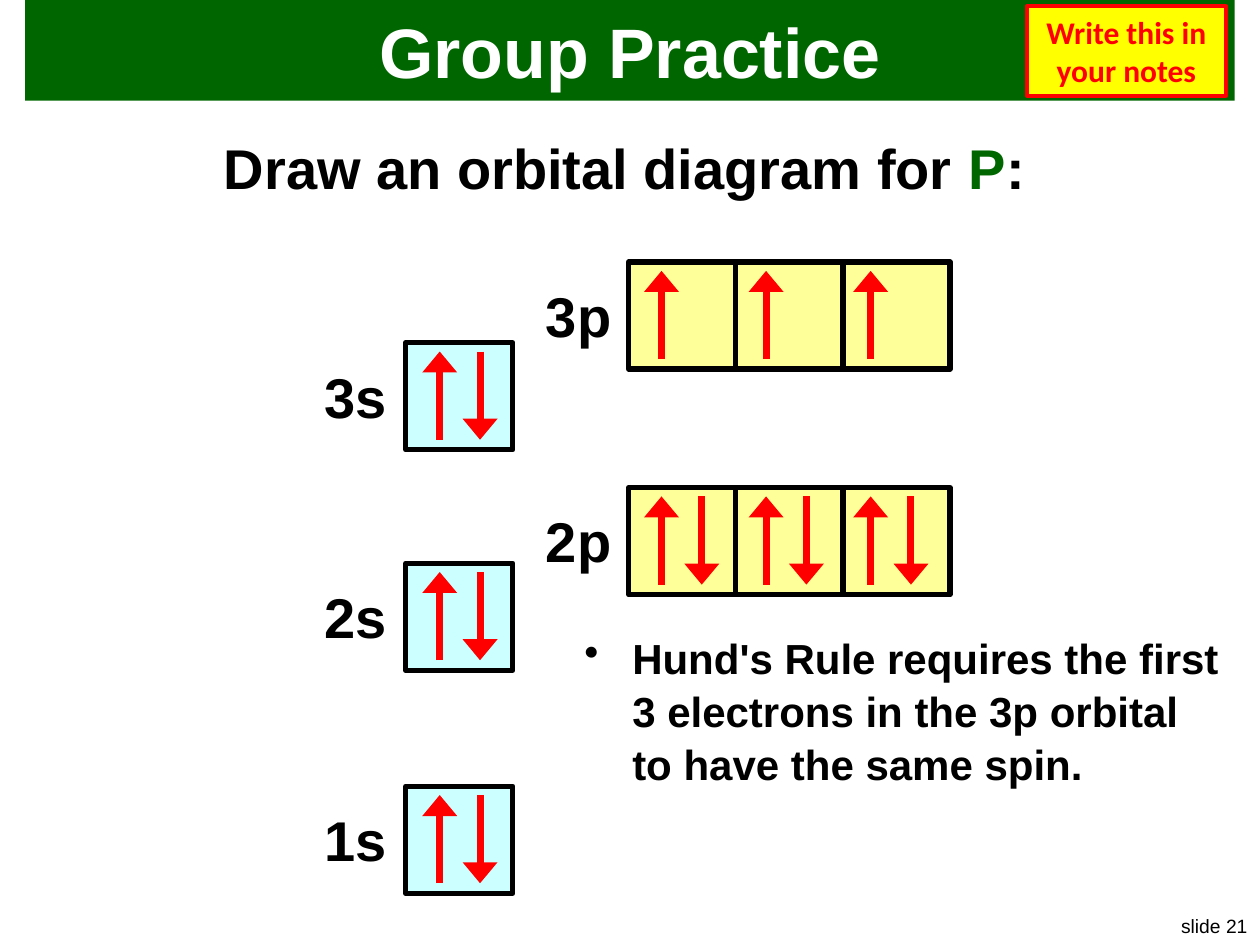
from dataclasses import dataclass

from lxml.etree import SubElement
from pptx import Presentation
from pptx.dml.color import RGBColor
from pptx.enum.shapes import MSO_CONNECTOR, MSO_SHAPE
from pptx.enum.text import MSO_ANCHOR, PP_ALIGN
from pptx.oxml.ns import qn
from pptx.util import Inches, Pt

BLACK, WHITE, RED, GREEN = "000000", "FFFFFF", "FF0000", "006600"
S_FILL, P_FILL = "CCFFFF", "FFFF99"
BOX = 0.85
S_LEFT, P_LEFT = 3.22, 4.99
ARROW_PITCH = 0.83


@dataclass
class Subshell:
    label: str
    top: float
    electrons: list[int]

    @property
    def is_p(self) -> bool:
        return self.label.endswith("p")


SUBSHELLS = [
    Subshell("1s", 6.24, [2]),
    Subshell("2s", 4.47, [2]),
    Subshell("2p", 3.87, [2, 2, 2]),
    Subshell("3s", 2.72, [2]),
    Subshell("3p", 2.08, [1, 1, 1]),
]


def rgb(value: str) -> RGBColor:
    return RGBColor.from_string(value)


def add_box(slide, left: float, top: float, width: float, height: float,
            fill: str, line: str | None = None, line_width: float = 3):
    box = slide.shapes.add_shape(MSO_SHAPE.RECTANGLE, Inches(left), Inches(top),
                                 Inches(width), Inches(height))
    box.shadow.inherit = False
    box.fill.solid()
    box.fill.fore_color.rgb = rgb(fill)
    if line:
        box.line.color.rgb = rgb(line)
        box.line.width = Pt(line_width)
    else:
        box.line.fill.background()
    return box


def add_textbox(slide, left: float, top: float, width: float, height: float):
    return slide.shapes.add_textbox(Inches(left), Inches(top),
                                    Inches(width), Inches(height))


def write(shape, text: str, size: float, color: str = BLACK,
          align: PP_ALIGN = PP_ALIGN.CENTER, bold: bool = True,
          font: str = "Arial", wrap: bool = True,
          anchor: MSO_ANCHOR = MSO_ANCHOR.MIDDLE):
    frame = shape.text_frame
    frame.word_wrap = wrap
    frame.vertical_anchor = anchor
    paragraph = frame.paragraphs[0]
    paragraph.alignment = align
    paragraph.font.name = font
    paragraph.font.size = Pt(size)
    paragraph.font.bold = bold
    paragraph.font.color.rgb = rgb(color)
    if text:
        paragraph.add_run().text = text
    return paragraph


def add_bullet(paragraph, indent: float) -> None:
    properties = paragraph._p.get_or_add_pPr()
    properties.set("marL", str(Inches(indent)))
    properties.set("indent", str(-Inches(indent)))
    bullet = properties.makeelement(qn("a:buChar"), {"char": "•"})
    properties.insert_element_before(bullet, "a:tabLst", "a:defRPr", "a:extLst")


def add_electron(slide, x: float, start: float, end: float) -> None:
    """Draw a spin arrow pointing from start to end."""
    arrow = slide.shapes.add_connector(MSO_CONNECTOR.STRAIGHT, Inches(x), Inches(start),
                                       Inches(x), Inches(end))
    arrow.line.color.rgb = rgb(RED)
    arrow.line.width = Pt(4)
    SubElement(arrow.line._get_or_add_ln(), qn("a:tailEnd"),
               type="triangle", w="lg", len="med")
    SubElement(arrow._element.spPr, qn("a:effectLst"))


def add_subshell(slide, subshell: Subshell) -> None:
    left = P_LEFT if subshell.is_p else S_LEFT
    label_left, label_width = (4.23, 0.72) if subshell.is_p else (2.47, 0.7)
    label = add_box(slide, label_left, subshell.top + 0.1, label_width, 0.64, WHITE)
    write(label, subshell.label, 32, align=PP_ALIGN.RIGHT, wrap=False)

    for index in range(len(subshell.electrons)):
        add_box(slide, left + index * BOX, subshell.top, BOX, BOX,
                P_FILL if subshell.is_p else S_FILL, BLACK)

    high, low = subshell.top + 0.07, subshell.top + 0.77
    up_inset = 0.26 if subshell.is_p else 0.27
    for index, count in enumerate(subshell.electrons):
        up_x = left + up_inset + index * ARROW_PITCH
        add_electron(slide, up_x, low, high)
        if count == 2:
            add_electron(slide, up_x + 0.32, high, low)


def main() -> None:
    deck = Presentation()
    deck.slide_width, deck.slide_height = Inches(10), Inches(7.5)
    slide = deck.slides.add_slide(deck.slide_layouts[6])

    slide_number = add_textbox(slide, 9.25, 7.21, 0.75, 0.29)
    write(slide_number, "slide 21", 11, align=PP_ALIGN.RIGHT, bold=False,
          wrap=False, anchor=MSO_ANCHOR.TOP)

    write(add_box(slide, 0.2, 0, 9.6, 0.8, GREEN), "Group Practice", 40, WHITE)

    task = add_textbox(slide, 0.2, 0.95, 9.51, 6.07)
    task.text_frame.margin_top = Inches(0.11)
    task_line = write(task, "", 32, anchor=MSO_ANCHOR.TOP)
    for text, color in [("Draw an orbital diagram for ", BLACK), ("P", GREEN), (":", BLACK)]:
        run = task_line.add_run()
        run.text = text
        run.font.color.rgb = rgb(color)

    for subshell in SUBSHELLS:
        add_subshell(slide, subshell)

    hund_rule = add_textbox(slide, 4.54, 4.95, 5.3, 1.31)
    hund_line = write(
        hund_rule,
        "Hund's Rule requires the first 3 electrons in the 3p orbital to have the same spin.",
        24, align=PP_ALIGN.LEFT, anchor=MSO_ANCHOR.TOP)
    hund_line.line_spacing = 1.05
    hund_line.space_after = Pt(12)
    add_bullet(hund_line, 0.38)

    notes_badge = add_box(slide, 8.15, 0.05, 1.58, 0.71, "FFFF00", RED, 2.25)
    write(notes_badge, "Write this in your notes", 18, RED, font="Calibri")

    deck.save("out.pptx")


if __name__ == "__main__":
    main()
